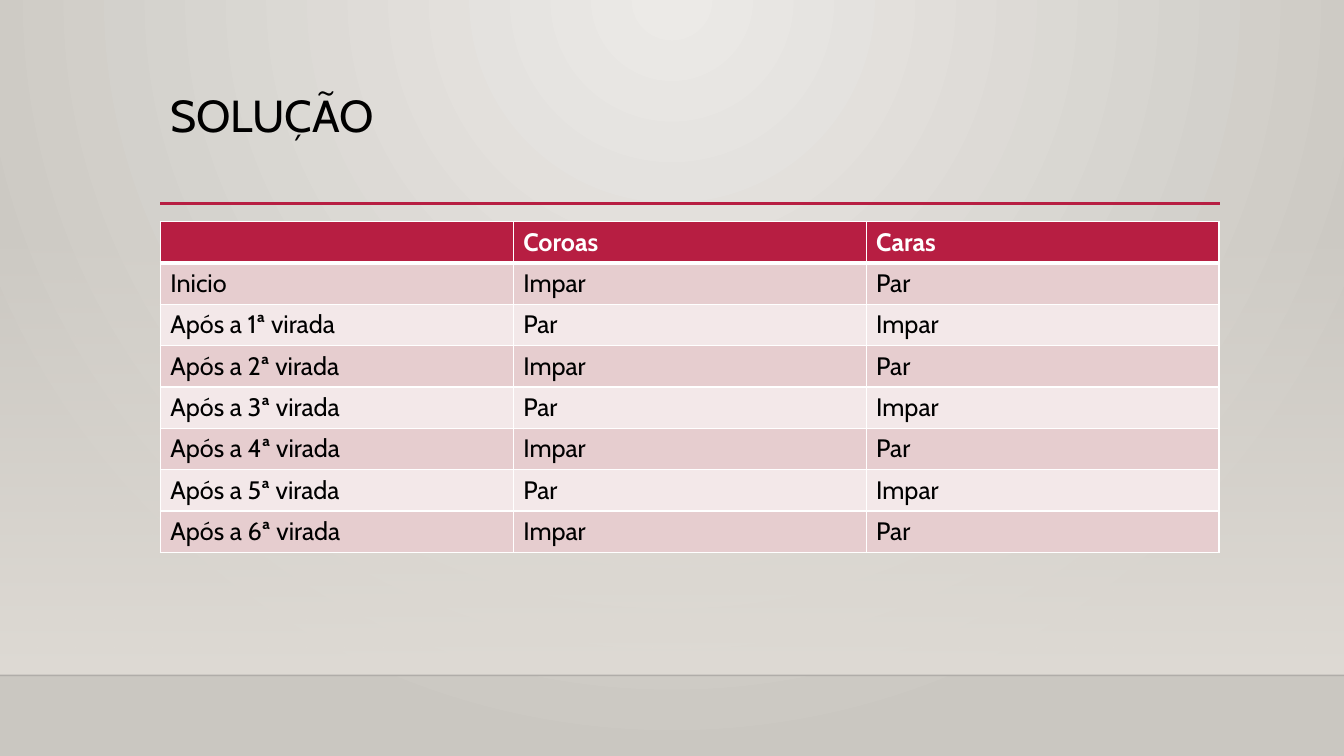
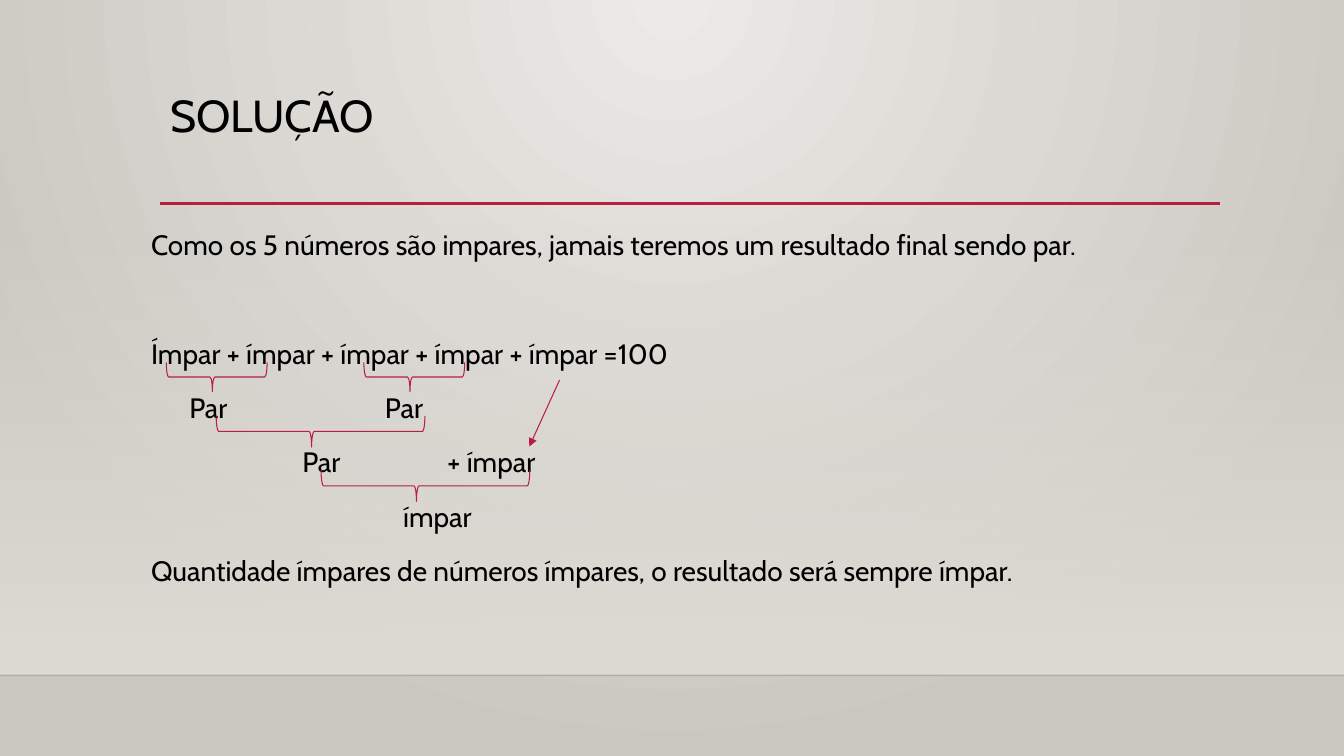
from lxml import etree
from pptx import Presentation
from pptx.dml.color import RGBColor
from pptx.enum.shapes import MSO_CONNECTOR, MSO_SHAPE
from pptx.oxml import parse_xml
from pptx.oxml.ns import nsdecls, qn
from pptx.util import Inches, Pt

STRAIGHT = MSO_CONNECTOR.STRAIGHT
RECTANGLE, BRACE = MSO_SHAPE.RECTANGLE, MSO_SHAPE.LEFT_BRACE

FONT = "Cabin"
BLACK = RGBColor(0x00, 0x00, 0x00)
FLOOR = RGBColor(0x00, 0x00, 0x01)
WHITE = RGBColor(0xFF, 0xFF, 0xFF)
CRIMSON = RGBColor(0xB7, 0x1E, 0x42)
ROSE = RGBColor(0xE6, 0xCD, 0xCF)
PALE_ROSE = RGBColor(0xF3, 0xE8, 0xE9)
LIGHT = RGBColor(0xEC, 0xEA, 0xE7)
STONE = RGBColor(0xCA, 0xC7, 0xC1)
WALL = RGBColor(0xDF, 0xDB, 0xD5)

# Content
TITLE = "SOLUÇÃO"
HEADER = ["", "Coroas", "Caras"]
STAGES = ["Inicio"] + [f"Após a {turn}ª virada" for turn in range(1, 7)]
PARITIES = ["Impar", "Par"]

# Each line: space before in points, then (tab position in inches, text) pieces
LINES = [
    (0, [(0, "Como os 5 números são impares, jamais teremos um resultado final sendo par.")]),
    (49, [(0, "Ímpar + ímpar + ímpar + ímpar + ímpar =100")]),
    (10, [(0.38, "Par"), (2.32, "Par")]),
    (10, [(1.5, "Par"), (2.94, "+ ímpar")]),
    (10, [(2.5, "ímpar")]),
    (10, [(0, "Quantidade ímpares de números ímpares, o resultado será sempre ímpar.")]),
]
# Braces: centre x, centre y, span, depth
BRACES = [
    (2.15, 3.74, 1, 0.29),
    (4.11, 3.74, 1, 0.29),
    (3.18, 4.28, 2.07, 0.31),
    (4.22, 4.82, 2.07, 0.31),
]
ARROW = (5.55, 3.77, 5.25, 4.43)

# Layout
WIDTH, HEIGHT = 13.33, 7.5
LEFT, CONTENT_WIDTH = 1.59, 10.5
WALL_TOP, FLOOR_TOP = 2.21, 6.7
ROW_HEIGHT = 0.41


def gradient(stops, shade):
    """Gradient fill from (colour, opacity %) stops at even steps."""
    marks = "".join(
        f'<a:gs pos="{100000 * i // (len(stops) - 1)}"><a:srgbClr val="{colour}">'
        f'<a:alpha val="{opacity * 1000}"/></a:srgbClr></a:gs>'
        for i, (colour, opacity) in enumerate(stops))
    return parse_xml(f'<a:gradFill {nsdecls("a")} rotWithShape="1">'
                     f'<a:gsLst>{marks}</a:gsLst>{shade}</a:gradFill>')


def swap_gradient(holder, new_fill):
    old_fill = holder.find(".//" + qn("a:gradFill"))
    old_fill.getparent().replace(old_fill, new_fill)


def add_line(page, ends, colour, weight):
    line = page.shapes.add_connector(STRAIGHT, *map(Inches, ends))
    line.line.color.rgb = colour
    line.line.width = Pt(weight)
    etree.SubElement(line.element.spPr, qn("a:effectLst"))
    return line


def style_runs(frame, size, colour, bold=False):
    for para in frame.paragraphs:
        for span in para.runs:
            span.font.name, span.font.size = FONT, Pt(size)
            span.font.color.rgb, span.font.bold = colour, bold


def add_text_frame(page, left, top, width, height):
    box = page.shapes.add_textbox(*map(Inches, (left, top, width, height)))
    box.text_frame.word_wrap = True
    return box.text_frame


def add_page(deck):
    """Page with the shared backdrop, rule and title."""
    page = deck.slides.add_slide(deck.slide_layouts[6])
    page.background.fill.gradient()
    swap_gradient(page.element, gradient(
        [(LIGHT, 100), (STONE, 100)],
        '<a:path path="circle"><a:fillToRect l="43000" r="43000" b="100000"/></a:path>'))

    wall = page.shapes.add_shape(RECTANGLE, 0, Inches(WALL_TOP), Inches(WIDTH),
                                 Inches(FLOOR_TOP - WALL_TOP))
    wall.shadow.inherit = False
    wall.line.fill.background()
    wall.fill.gradient()
    swap_gradient(wall.element, gradient([(WALL, 0), (WALL, 100)],
                                         '<a:lin ang="5400000" scaled="0"/>'))

    floor = add_line(page, (0, FLOOR_TOP, WIDTH, FLOOR_TOP), FLOOR, 1)
    tint = floor.element.spPr.find(".//" + qn("a:srgbClr"))
    etree.SubElement(tint, qn("a:alpha"), val="20000")
    add_line(page, (LEFT, 2.02, 12.1, 2.02), CRIMSON, 2.5)

    frame = add_text_frame(page, LEFT, 0.88, CONTENT_WIDTH, 1.15)
    frame.text = TITLE
    frame.paragraphs[0].line_spacing = 0.9
    style_runs(frame, 32, BLACK)
    return page


def add_borders(cell, top, bottom):
    properties = cell._tc.get_or_add_tcPr()
    for side, weight in (("L", 1), ("R", 1), ("T", top), ("B", bottom)):
        properties.append(parse_xml(
            f'<a:ln{side} {nsdecls("a")} w="{Pt(weight)}"><a:solidFill>'
            f'<a:srgbClr val="{WHITE}"/></a:solidFill></a:ln{side}>'))


def add_parity_table(page):
    rows = [HEADER] + [[stage, PARITIES[i % 2], PARITIES[(i + 1) % 2]]
                       for i, stage in enumerate(STAGES)]
    table = page.shapes.add_table(
        len(rows), len(HEADER), Inches(LEFT), Inches(2.2),
        Inches(CONTENT_WIDTH), Inches(ROW_HEIGHT * len(rows))).table
    table.first_row = table.horz_banding = False
    for r, row in enumerate(rows):
        is_header = r == 0
        for c, text in enumerate(row):
            cell = table.cell(r, c)
            cell.text = text
            style_runs(cell.text_frame, 18, WHITE if is_header else BLACK, is_header)
            add_borders(cell, 3 if r == 1 else 1, 3 if is_header else 1)
            cell.fill.solid()
            cell.fill.fore_color.rgb = CRIMSON if is_header else (PALE_ROSE, ROSE)[r % 2]


def add_sum_text(page):
    frame = add_text_frame(page, 1.4, 2.14, CONTENT_WIDTH, 3.77)
    for i, (space, pieces) in enumerate(LINES):
        para = frame.add_paragraph() if i else frame.paragraphs[0]
        para.text = "".join("\t" * (stop > 0) + text for stop, text in pieces)
        stops = [stop for stop, text in pieces if stop]
        if stops:
            tabs = etree.SubElement(para._p.get_or_add_pPr(), qn("a:tabLst"))
            for stop in stops:
                etree.SubElement(tabs, qn("a:tab"), pos=str(Inches(stop)), algn="l")
        para.line_spacing = 1.2
        para.space_before = Pt(space)
    style_runs(frame, 20, BLACK)


def add_brace(page, x, y, span, depth):
    """Brace turned to point down, centred on x, y."""
    brace = page.shapes.add_shape(BRACE, Inches(x - depth / 2), Inches(y - span / 2),
                                  Inches(depth), Inches(span))
    brace.shadow.inherit = False
    brace.fill.background()
    brace.line.color.rgb, brace.line.width = CRIMSON, Pt(0.75)
    brace.adjustments[0], brace.adjustments[1] = 0.083, 0.543
    brace.rotation = 90
    brace.element.spPr.find(qn("a:xfrm")).set("flipH", "1")


def main():
    deck = Presentation()
    deck.slide_width, deck.slide_height = Inches(WIDTH), Inches(HEIGHT)

    add_parity_table(add_page(deck))

    sum_page = add_page(deck)
    add_sum_text(sum_page)
    for brace in BRACES:
        add_brace(sum_page, *brace)
    arrow = add_line(sum_page, ARROW, CRIMSON, 0.75)
    etree.SubElement(arrow.line._get_or_add_ln(), qn("a:tailEnd"), type="triangle")

    deck.save("out.pptx")


if __name__ == "__main__":
    main()
